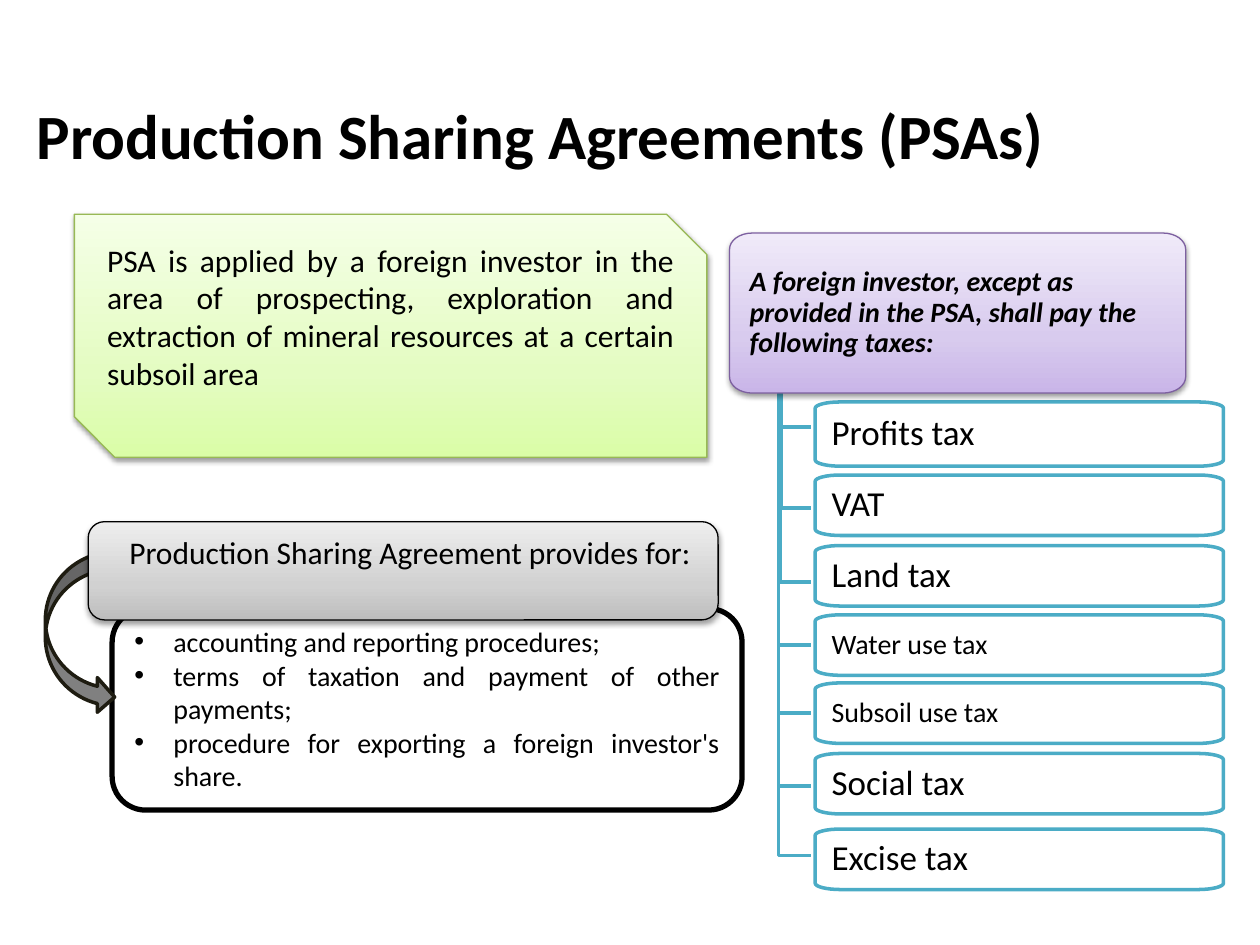
import math
from dataclasses import dataclass

import lxml.etree
import pptx
import pptx.dml.color
import pptx.enum.shapes
import pptx.enum.text
import pptx.oxml.ns
import pptx.util

COLUMNS, ROWS = 100, 75  # one cell is a tenth of an inch
SHAPES = pptx.enum.shapes.MSO_SHAPE
ALIGN = pptx.enum.text.PP_ALIGN
ANCHOR = pptx.enum.text.MSO_ANCHOR
qn = pptx.oxml.ns.qn


@dataclass(frozen=True)
class Theme:
    font: str = "Calibri"
    ink: str = "000000"
    paper: str = "FFFFFF"
    teal: str = "4BACC6"
    arrow: str = "808080"
    arrow_edge: str = "1E1C11"
    green_edge: str = "98B955"
    purple_edge: str = "7D60A0"
    # Gradients run from bottom to top
    green: tuple = ("DAFDA7", "E4FCC2", "F5FFE7")
    grey: tuple = ("BDBDBD", "D1D1D1", "EEEEEE")
    purple: tuple = ("C9B5E8", "D8CBEE", "F0EAF9")
    stops: tuple = (0, 35, 100)
    title: int = 36
    large: int = 20
    body: int = 18
    small: int = 16


class SlideBuilder:
    def __init__(self, deck, theme):
        self.theme = theme
        self.cell = deck.slide_width / COLUMNS
        self.page = deck.slides.add_slide(deck.slide_layouts[5])

    def length(self, cells):
        return pptx.util.Emu(round(cells * self.cell))

    def colour(self, value):
        return pptx.dml.color.RGBColor.from_string(value)

    def style(self, shape, fill, edge, width):
        """Set fill and line; a tuple of colours is a gradient with a soft shadow."""
        shape.shadow.inherit = False
        shape.line.color.rgb = self.colour(edge)
        shape.line.width = pptx.util.Pt(width)
        if fill is None:
            shape.fill.background()
        elif isinstance(fill, tuple):
            self.gradient(shape, fill)
            self.soft_shadow(shape)
        else:
            shape.fill.solid()
            shape.fill.fore_color.rgb = self.colour(fill)

    def gradient(self, shape, colours):
        shape.fill.gradient()
        shape.fill.gradient_angle = 90
        stops = shape.element.spPr.find(".//" + qn("a:gsLst"))
        for old in list(stops):
            stops.remove(old)
        for place, value in zip(self.theme.stops, colours):
            stop = lxml.etree.SubElement(stops, qn("a:gs"), pos=str(place * 1000))
            lxml.etree.SubElement(stop, qn("a:srgbClr"), val=value)

    def soft_shadow(self, shape):
        effects = shape.element.spPr.find(qn("a:effectLst"))
        shadow = lxml.etree.SubElement(effects, qn("a:outerShdw"), blurRad="40000",
                                       dist="20000", dir="5400000", rotWithShape="0")
        tint = lxml.etree.SubElement(shadow, qn("a:srgbClr"), val=self.theme.ink)
        lxml.etree.SubElement(tint, qn("a:alpha"), val="38000")

    def label(self, shape, lines, size, align=ALIGN.LEFT, anchor=ANCHOR.TOP,
              inset=(1, 0.5), spacing=1.0, margin=0, indent=0, bullet=None, **font):
        frame = shape.text_frame
        across, down = map(self.length, inset)
        frame_format = {"word_wrap": True, "vertical_anchor": anchor,
                        "margin_left": across, "margin_right": across,
                        "margin_top": down, "margin_bottom": down}
        for name, value in frame_format.items():
            setattr(frame, name, value)
        for number, line in enumerate(lines):
            para = frame.add_paragraph() if number else frame.paragraphs[0]
            para.alignment = align
            para.line_spacing = spacing
            span = para.add_run()
            span.text = line
            span.font.color.rgb = self.colour(self.theme.ink)
            font_format = {"name": self.theme.font, "size": pptx.util.Pt(size), **font}
            for name, value in font_format.items():
                setattr(span.font, name, value)
            settings = para._p.get_or_add_pPr()
            settings.set("marL", str(self.length(margin)))
            settings.set("indent", str(self.length(indent)))
            if bullet:
                lxml.etree.SubElement(settings, qn("a:buFont"), typeface="Arial")
                lxml.etree.SubElement(settings, qn("a:buChar"), char=bullet)

    def title(self, text, place):
        title = self.page.shapes.title
        title.left, title.top, title.width, title.height = map(self.length, place)
        self.label(title, [text], self.theme.title, anchor=ANCHOR.MIDDLE, bold=True)

    def preset(self, kind, place, fill, edge, width, rotation=0):
        shape = self.page.shapes.add_shape(kind, *map(self.length, place))
        shape.rotation = rotation
        self.style(shape, fill, edge, width)
        return shape

    def outline(self, points, fill, edge, width, close):
        corners = [tuple(map(self.length, point)) for point in points]
        pen = self.page.shapes.build_freeform(*corners[0])
        pen.add_line_segments(corners[1:], close=close)
        shape = pen.convert_to_shape()
        self.style(shape, fill, edge, width)
        return shape

    def oval_corner_box(self, place, corner, fill, edge, width):
        """Box whose corners are quarter ellipses, wider than they are high."""
        left, top, wide, high = place
        across, down = corner
        centres = [(left + wide - across, top + high - down), (left + across, top + high - down),
                   (left + across, top + down), (left + wide - across, top + down)]
        points = []
        for quarter, (x, y) in enumerate(centres):
            for step in range(9):
                angle = math.radians(90 * quarter + 90 * step / 8)
                points.append((x + across * math.cos(angle), y + down * math.sin(angle)))
        return self.outline(points, fill, edge, width, True)

    def branch(self, x, end_x, y, rise):
        points = [(x, y - rise), (x, y), (end_x, y)]
        self.outline(points, None, self.theme.teal, 2, False)


def main():
    theme = Theme()
    deck = pptx.Presentation()
    deck.slide_width, deck.slide_height = pptx.util.Inches(10), pptx.util.Inches(7.5)
    slide = SlideBuilder(deck, theme)

    slide.title("Production Sharing Agreements (PSAs)", (1.9, 7.6, 98, 6.1))

    # What the agreement provides for
    terms = slide.preset(SHAPES.ROUNDED_RECTANGLE, (8.9, 48.3, 50, 16), theme.paper, theme.ink, 3)
    slide.label(terms, ["accounting and reporting procedures;",
                        "terms of taxation and payment of other payments;",
                        "procedure for exporting a foreign investor's share."],
                theme.small, ALIGN.JUSTIFY, margin=3.1, indent=-3.1, bullet="•")
    slide.preset(SHAPES.CURVED_UP_ARROW, (-0.1, 47.5, 12.9, 5.5), theme.arrow,
                 theme.arrow_edge, 2, rotation=90)
    heading = slide.preset(SHAPES.ROUNDED_RECTANGLE, (7, 41.4, 50, 7.8), theme.grey, theme.ink, 0.75)
    slide.label(heading, ["Production Sharing Agreement provides for:"],
                theme.body, ALIGN.JUSTIFY, indent=1.9)

    # Definition
    definition = slide.preset(SHAPES.SNIP_2_DIAG_RECTANGLE, (5.9, 17, 50.2, 19.3),
                              theme.green, theme.green_edge, 0.75)
    slide.label(definition, ["PSA is applied by a foreign investor in the area of prospecting, "
                             "exploration and extraction of mineral resources at a certain "
                             "subsoil area"], theme.body, ALIGN.JUSTIFY)

    # Taxes: name, type size, box top, box height, branch x, branch y, branch rise
    taxes = [
        ("Profits tax", theme.large, 31.9, 5.1, 61.8, 33.9, 9.5),
        ("VAT", theme.large, 37.7, 4.8, 62, 40.3, 9.5),
        ("Land tax", theme.large, 43.3, 4.8, 61.9, 46.2, 9.5),
        ("Water use tax", theme.small, 48.8, 4.8, 61.8, 51.2, 9.5),
        ("Subsoil use tax", theme.small, 54.2, 4.8, 61.8, 56.6, 25.4),
        ("Social tax", theme.large, 59.8, 4.8, 61.8, 62.4, 25.4),
        ("Excise tax", theme.large, 65.8, 4.8, 61.8, 67.9, 25.4),
    ]
    for name, size, top, height, x, y, rise in taxes:
        slide.branch(x, 64.4, y, rise)
        box = slide.oval_corner_box((64.7, top, 32.4, height), (2, 0.5), theme.paper, theme.teal, 2)
        slide.label(box, [name], size, anchor=ANCHOR.MIDDLE, inset=(1.3, 1), spacing=0.9)

    # Heading of the tax list, over the branches
    payer = slide.oval_corner_box((57.9, 18.5, 36.2, 12.7), (1.8, 1.3),
                                  theme.purple, theme.purple_edge, 0.75)
    slide.label(payer, ["A foreign investor, except as provided in the PSA, "
                        "shall pay the following taxes:"], theme.small, anchor=ANCHOR.MIDDLE,
                inset=(1.6, 1.2), spacing=0.9, bold=True, italic=True)

    deck.save("out.pptx")


if __name__ == "__main__":
    main()
